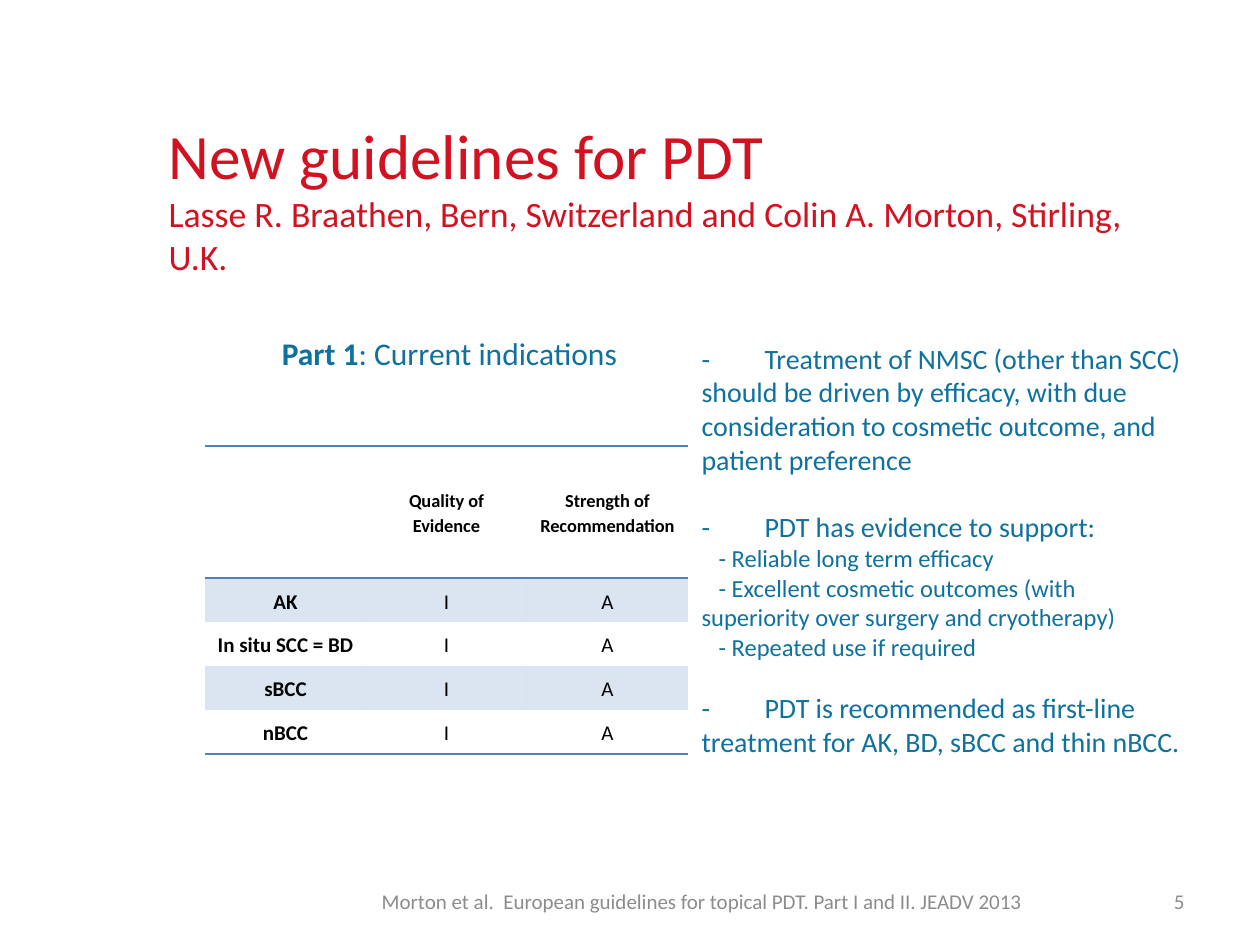
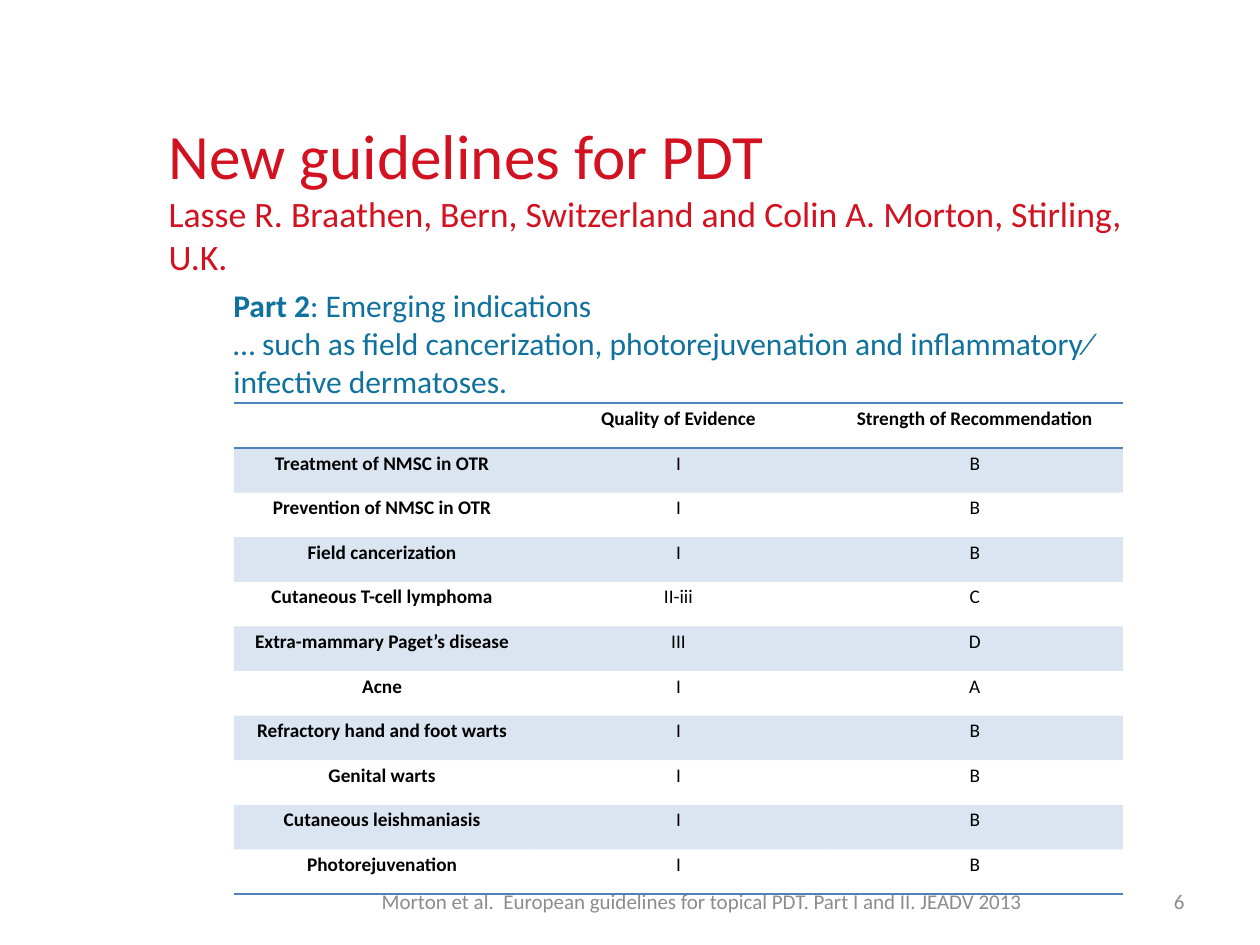
import dataclasses

import pptx
import pptx.dml.color
import pptx.enum.text
import pptx.oxml
import pptx.oxml.ns
import pptx.util

ALIGN = pptx.enum.text.PP_ALIGN
ANCHOR = pptx.enum.text.MSO_ANCHOR
NO_STYLE = "{2D5ABB26-0587-4C30-8999-92F81FD0307C}"
TITLE_ONLY, TITLE_AND_CONTENT = 5, 1


@dataclasses.dataclass(frozen=True)
class Theme:
    font: str = "Calibri"
    red: str = "D21121"
    teal: str = "0F719D"
    grey: str = "8C8C8C"
    black: str = "000000"
    rule: str = "4F81BD"
    title: float = 36.1
    authors: float = 20.4
    intro: float = 18
    point: float = 16
    subpoint: float = 14
    footer: float = 12


theme = Theme()


def px(*lengths):
    """Turn pixels (126 to the inch) into EMU."""
    return [pptx.util.Emu(round(length * 914400 / 126)) for length in lengths]


def write(frame, text, *, size, color, lead="", bold=False, align=ALIGN.LEFT,
          anchor=ANCHOR.TOP, line=None, before=0, indent=0, tab=0):
    """Add one paragraph to a text frame; lead is a bold beginning."""
    frame.word_wrap = True
    frame.vertical_anchor = anchor
    paragraph = frame.paragraphs[0] if not frame.text else frame.add_paragraph()
    properties = paragraph._p.get_or_add_pPr()
    properties.set("marL", "0")
    properties.set("indent", str(px(indent)[0]))
    namespace = pptx.oxml.ns.nsdecls("a")
    properties.append(pptx.oxml.parse_xml(f"<a:buNone {namespace}/>"))
    if tab:
        properties.append(pptx.oxml.parse_xml(
            f'<a:tabLst {namespace}><a:tab pos="{px(tab)[0]}" algn="l"/></a:tabLst>'))
    paragraph.alignment = align
    paragraph.space_before = pptx.util.Pt(before)
    if line:
        paragraph.line_spacing = line
    for words, is_bold in ((lead, True), (text, bold)):
        if words:
            run = paragraph.add_run()
            run.text = words
            run.font.name = theme.font
            run.font.size = pptx.util.Pt(size)
            run.font.bold = is_bold
            run.font.color.rgb = pptx.dml.color.RGBColor.from_string(color)


# Content of the two slides
headings = ["", "Quality of Evidence", "Strength of Recommendation"]
current = [
    ("AK", "I", "A"),
    ("In situ SCC = BD", "I", "A"),
    ("sBCC", "I", "A"),
    ("nBCC", "I", "A"),
]
emerging = [
    ("Treatment of NMSC in OTR", "I", "B"),
    ("Prevention of NMSC in OTR", "I", "B"),
    ("Field cancerization", "I", "B"),
    ("Cutaneous T-cell lymphoma", "II-iii", "C"),
    ("Extra-mammary Paget’s disease", "III", "D"),
    ("Acne", "I", "A"),
    ("Refractory hand and foot warts", "I", "B"),
    ("Genital warts", "I", "B"),
    ("Cutaneous leishmaniasis", "I", "B"),
    ("Photorejuvenation", "I", "B"),
]
# Each conclusion: level, space before in points, text
conclusions = [
    (0, 0, "Treatment of NMSC (other than SCC) should be driven by efficacy, "
           "with due consideration to cosmetic outcome, and patient preference"),
    (0, 19.5, "PDT has evidence to support:"),
    (1, 0, "Reliable long term efficacy"),
    (1, 0, "Excellent cosmetic outcomes (with superiority over surgery and cryotherapy)"),
    (1, 0, "Repeated use if required"),
    (0, 17, "PDT is recommended as first-line treatment for AK, BD, sBCC and thin nBCC."),
]
topics = [
    dict(number=5, layout=TITLE_AND_CONTENT, lead="Part 1",
         intro=[": Current indications"], intro_at=(221, 328, 457, 50),
         intro_align=ALIGN.CENTER, conclusions=conclusions,
         grades=current, grades_at=(205, 446, 483, 308), heading_height=132,
         heading_size=10.5, grade_size=12, anchor=ANCHOR.MIDDLE),
    dict(number=6, layout=TITLE_ONLY, lead="Part 2",
         intro=[": Emerging indications",
                "… such as field cancerization, photorejuvenation and "
                "inflammatory⁄ infective dermatoses."],
         intro_at=(221, 280, 922, 127), intro_align=ALIGN.LEFT, conclusions=[],
         grades=emerging, grades_at=(234, 403, 889, 491), heading_height=45,
         heading_size=11, grade_size=11, anchor=ANCHOR.TOP),
]

deck = pptx.Presentation()
deck.slide_width, deck.slide_height = px(1260, 945)

for topic in topics:
    slide = deck.slides.add_slide(deck.slide_layouts[topic["layout"]])

    # Title with authors
    title = slide.shapes.title
    title.left, title.top, title.width, title.height = px(156, 118, 1041, 158)
    title.text_frame.auto_size = pptx.enum.text.MSO_AUTO_SIZE.NONE
    for text, size in (
            ("New guidelines for PDT", theme.title),
            ("Lasse R. Braathen, Bern, Switzerland and Colin A. Morton, Stirling, U.K.",
             theme.authors)):
        write(title.text_frame, text, size=size, color=theme.red, anchor=ANCHOR.MIDDLE)

    # Conclusions beside the table
    if topic["conclusions"]:
        body = slide.placeholders[1]
        body.left, body.top, body.width, body.height = px(689, 335, 508, 496)
        body.text_frame.auto_size = pptx.enum.text.MSO_AUTO_SIZE.NONE
        for level, before, text in topic["conclusions"]:
            if level:
                write(body.text_frame, "- " + text, size=theme.subpoint,
                      color=theme.teal, before=before, indent=17)
            else:
                write(body.text_frame, "-\t" + text, size=theme.point,
                      color=theme.teal, before=before, tab=21)

    # Footer and slide number
    for text, place, align in (
            ("Morton et al.  European guidelines for topical PDT. Part I and II. JEADV 2013",
             (246, 876, 912, 50), ALIGN.CENTER),
            (str(topic["number"]), (903, 876, 294, 50), ALIGN.RIGHT)):
        footer = slide.shapes.add_textbox(*px(*place))
        write(footer.text_frame, text, size=theme.footer, color=theme.grey,
              align=align, anchor=ANCHOR.MIDDLE)

    # Table of evidence grades
    rows = [headings, *topic["grades"]]
    left, top, width, height = topic["grades_at"]
    grades = slide.shapes.add_table(len(rows), 3, *px(left, top, width, height)).table
    grades._tbl.tblPr.find(pptx.oxml.ns.qn("a:tableStyleId")).text = NO_STYLE
    grades.horz_banding = False
    for column in grades.columns:
        column.width = px(width / 3)[0]
    row_height = (height - topic["heading_height"]) / len(topic["grades"])
    for r, row in enumerate(rows):
        grades.rows[r].height = px(row_height if r else topic["heading_height"])[0]
        for c, text in enumerate(row):
            cell = grades.cell(r, c)
            cell.margin_left = cell.margin_right = px(9)[0]
            cell.margin_top = cell.margin_bottom = 0
            cell.vertical_anchor = topic["anchor"]
            write(cell.text_frame, text, color=theme.black,
                  size=topic["grade_size"] if r else topic["heading_size"],
                  bold=r == 0 or c == 0, align=ALIGN.CENTER, line=1.15,
                  anchor=None)

            # Translucent band on every other row
            if r % 2:
                cell.fill.solid()
                cell.fill.fore_color.rgb = pptx.dml.color.RGBColor.from_string(theme.rule)
                tint = cell._tc.tcPr.find(".//" + pptx.oxml.ns.qn("a:srgbClr"))
                tint.append(pptx.oxml.parse_xml(
                    f'<a:alpha {pptx.oxml.ns.nsdecls("a")} val="20000"/>'))
            else:
                cell.fill.background()

            # Rules around the headings and below the last row
            edges = ["lnB"] if r in (0, len(rows) - 1) else []
            if r == 0:
                edges.append("lnT")
            for edge in edges:
                cell._tc.tcPr.insert(0, pptx.oxml.parse_xml(
                    f'<a:{edge} {pptx.oxml.ns.nsdecls("a")} w="12700"><a:solidFill>'
                    f'<a:srgbClr val="{theme.rule}"/></a:solidFill></a:{edge}>'))

    # Name of the topic
    intro = slide.shapes.add_textbox(*px(*topic["intro_at"]))
    for i, text in enumerate(topic["intro"]):
        write(intro.text_frame, text, lead="" if i else topic["lead"],
              size=theme.intro, color=theme.teal, align=topic["intro_align"])

deck.save("out.pptx")
